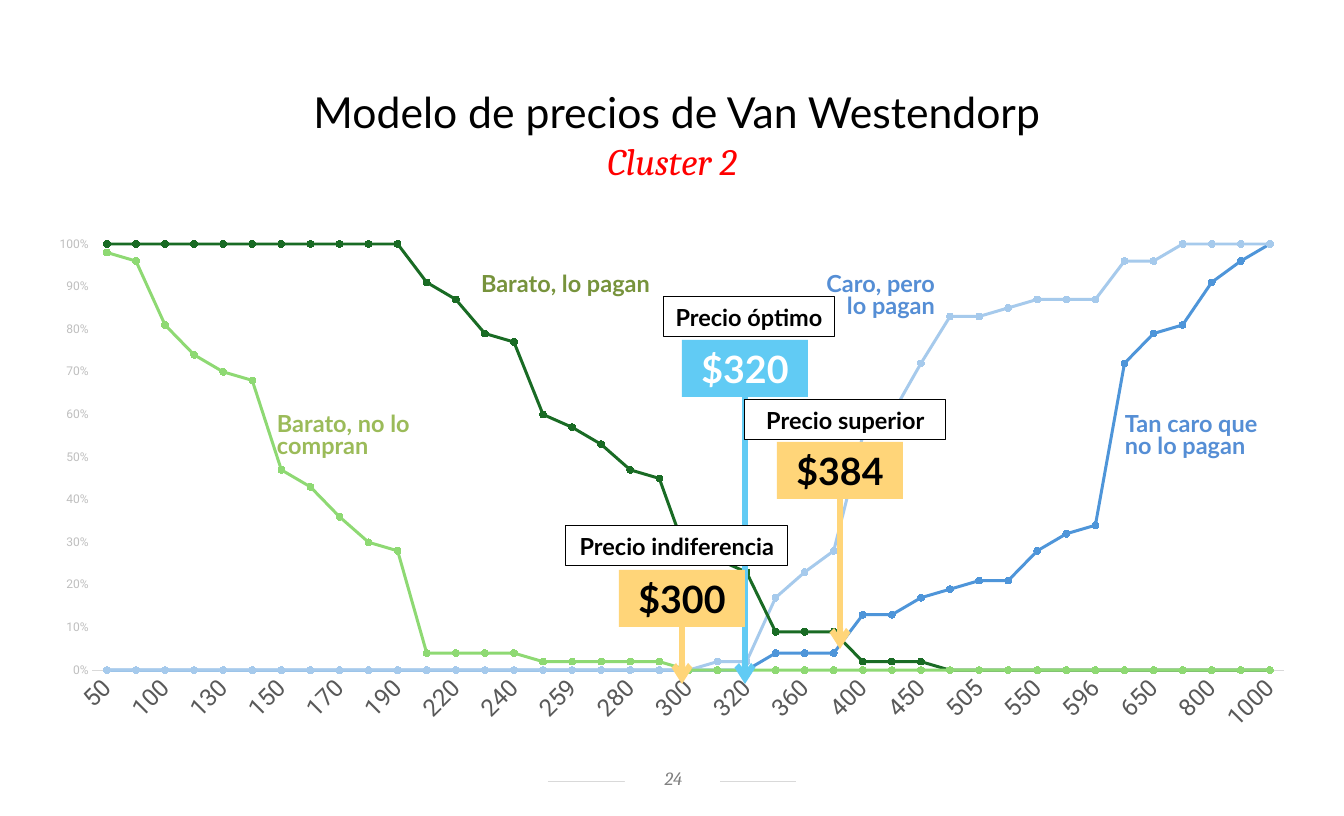
from dataclasses import dataclass

from lxml.etree import SubElement
from pptx import Presentation
from pptx.chart.data import CategoryChartData
from pptx.dml.color import RGBColor
from pptx.enum.chart import XL_CHART_TYPE as ChartType, XL_MARKER_STYLE as Marker, XL_TICK_MARK as Tick
from pptx.enum.shapes import MSO_CONNECTOR as Connector, MSO_SHAPE as Shape
from pptx.enum.text import MSO_ANCHOR as Anchor, MSO_AUTO_SIZE as AutoSize, PP_ALIGN as Align
from pptx.oxml import parse_xml
from pptx.oxml.ns import nsdecls, qn
from pptx.util import Pt

PX = 9525


@dataclass(frozen=True)
class Theme:
    sans: str = "Lato"
    serif: str = "Cambria"
    axis_font: str = "Roboto"
    title: float = 32
    subtitle: float = 28
    price: float = 28.2
    label: float = 17.6
    page_number: float = 14
    category: float = 18
    percent: float = 9
    black: str = "000000"
    white: str = "FFFFFF"
    red: str = "FF0000"
    rule: str = "D9D9D9"
    number: str = "808080"
    category_ink: str = "595959"
    percent_ink: str = "BFBFBF"
    optimum: str = "61CBF4"
    limit: str = "FFD579"
    expensive: str = "558ED5"
    cheap: str = "77933C"
    too_cheap: str = "9BBB59"


THEME = Theme()

PRICES = """50 80 100 120 130 140 150 160 170 180 190 200 220 230 240 250 259 260 280 290 300 305
320 350 360 380 400 420 450 500 505 520 550 580 596 600 650 700 800 900 1000""".split()
CURVES = [
    ("4E95D9", [0] * 23 + [.04] * 3 + [.13, .13, .17, .19, .21, .21, .28, .32, .34,
                                      .72, .79, .81, .91, .96, 1]),
    ("A6CAEC", [0] * 21 + [.02, .02, .17, .23, .28, .55, .6, .72, .83, .83, .85,
                           .87, .87, .87, .96, .96] + [1] * 4),
    ("196B24", [1] * 11 + [.91, .87, .79, .77, .6, .57, .53, .47, .45, .26, .26, .23,
                           .09, .09, .09, .02, .02, .02] + [0] * 12),
    ("8ED973", [.98, .96, .81, .74, .7, .68, .47, .43, .36, .3, .28] + [.04] * 4
     + [.02] * 5 + [0] * 21),
]

# price, caption, fill, ink, price box corner, caption box (left, top, width), arrow tip
MARKERS = [
    ("$320", "Precio óptimo", THEME.optimum, THEME.white, (682, 340), (663, 297, 172), 684),
    ("$384", "Precio superior", THEME.limit, THEME.black, (777, 442), (745, 400, 201), 649),
    ("$300", "Precio indiferencia", THEME.limit, THEME.black, (619, 570), (566, 526, 222), 684),
]
CURVE_NAMES = [
    ("Caro, pero lo pagan", THEME.expensive, Align.RIGHT, (800, 268, 147, 57)),
    ("Barato, no lo\ncompran", THEME.too_cheap, Align.LEFT, (265, 408, 157, 57)),
    ("Barato, lo pagan", THEME.cheap, Align.LEFT, (469, 268, 194, 35)),
    ("Tan caro que no lo pagan", THEME.expensive, Align.LEFT, (1113, 408, 171, 57)),
]


def emu(box):
    return [length * PX for length in box]


def style_font(font, name, size, color, bold=False, italic=False):
    font.name, font.size = name, Pt(size)
    font.bold, font.italic = bold, italic
    font.color.rgb = RGBColor.from_string(color)


def write(shape, text, name, size, color, align=Align.CENTER, insets=(12, 6, 12, 6),
          anchor=Anchor.TOP, wrap=True, spacing=1.0, **emphasis):
    frame = shape.text_frame
    frame.text = text
    frame.word_wrap, frame.auto_size = wrap, AutoSize.NONE
    frame.vertical_anchor = anchor
    frame.margin_left, frame.margin_top, frame.margin_right, frame.margin_bottom = emu(insets)
    for para in frame.paragraphs:
        para.alignment, para.line_spacing = align, spacing
        para.space_before = Pt(0)
        for span in para.runs:
            style_font(span.font, name, size, color, **emphasis)


def add_box(page, box, fill, outline=None):
    shape = page.shapes.add_shape(Shape.RECTANGLE, *emu(box))
    shape.shadow.inherit = False
    shape.fill.solid()
    shape.fill.fore_color.rgb = RGBColor.from_string(fill)
    if outline:
        shape.line.color.rgb = RGBColor.from_string(outline)
        shape.line.width = Pt(0.75)
    else:
        shape.line.fill.background()
    return shape


def add_line(page, start, end, color, width):
    line = page.shapes.add_connector(Connector.STRAIGHT, *emu(start + end))
    line.line.color.rgb = RGBColor.from_string(color)
    line.line.width = Pt(width)
    SubElement(line._element.spPr, qn("a:effectLst"))
    return line


def add_heading(page, title_box, subtitle_box):
    title, subtitle = page.shapes.title, page.placeholders[1]
    for shape, box in ((title, title_box), (subtitle, subtitle_box)):
        shape.left, shape.top, shape.width, shape.height = emu(box)
    insets = (13, 7, 13, 7)
    write(title, "Modelo de precios de Van Westendorp", THEME.sans, THEME.title,
          THEME.black, insets=insets)
    write(subtitle, "Cluster 2", THEME.serif, THEME.subtitle, THEME.red,
          insets=insets, italic=True)


def add_price_chart(page, box):
    data = CategoryChartData(number_format="0%")
    data.categories = PRICES
    for number, (_, values) in enumerate(CURVES, 1):
        data.add_series(f"Series {number}", values)
    chart = page.shapes.add_chart(ChartType.LINE_MARKERS, *emu(box), data).chart
    chart.has_legend = chart.has_title = False
    style_font(chart.font, "Calibri", 10, THEME.black)
    for series, (color, _) in zip(chart.plots[0].series, CURVES):
        rgb = RGBColor.from_string(color)
        series.smooth = False
        series.format.line.color.rgb = rgb
        series.format.line.width = Pt(2.25)
        series.marker.style, series.marker.size = Marker.CIRCLE, 5
        series.marker.format.fill.solid()
        series.marker.format.fill.fore_color.rgb = rgb
        series.marker.format.line.color.rgb = rgb
    style_axes(chart)
    place_plot(chart, x=0.045, y=0.033, w=0.935, h=0.826)


def style_axes(chart):
    prices, percents = chart.category_axis, chart.value_axis
    for axis in (prices, percents):
        axis.major_tick_mark = axis.minor_tick_mark = Tick.NONE
        axis.has_major_gridlines = False
    style_font(prices.tick_labels.font, THEME.axis_font, THEME.category, THEME.category_ink)
    prices.format.line.color.rgb = RGBColor.from_string(THEME.rule)
    prices.format.line.width = Pt(0.75)
    prices._element.find(qn("c:txPr")).find(qn("a:bodyPr")).set("rot", "-2700000")
    skip = parse_xml(f'<c:tickLblSkip {nsdecls("c")} val="2"/>')
    prices._element.find(qn("c:noMultiLvlLbl")).addprevious(skip)
    style_font(percents.tick_labels.font, THEME.axis_font, THEME.percent, THEME.percent_ink)
    percents.tick_labels.number_format = "0%"
    percents.tick_labels.number_format_is_linked = False
    percents.minimum_scale, percents.maximum_scale, percents.major_unit = 0, 1, 0.1
    percents.format.line.fill.background()


def place_plot(chart, **fractions):
    """Fix the inner plot area as fractions of the chart frame."""
    area = chart._chartSpace.chart.plotArea
    for old in area.findall(qn("c:layout")):
        area.remove(old)
    layout = parse_xml(f'<c:layout {nsdecls("c")}><c:manualLayout/></c:layout>')
    settings = {"layoutTarget": "inner", "xMode": "edge", "yMode": "edge", **fractions}
    for tag, value in settings.items():
        SubElement(layout[0], qn(f"c:{tag}")).set("val", str(value))
    area.insert(0, layout)


def add_price_marker(page, price, caption, fill, ink, corner, caption_box, tip):
    """Draw a price box with its arrow to the axis and its caption."""
    left, top = corner
    width, height = 126, 57
    center = left + width // 2
    price_box = add_box(page, (left, top, width, height), fill)
    write(price_box, price, THEME.sans, THEME.price, ink, bold=True)
    arrow = add_line(page, (center, top + height), (center, tip), fill, 4.5)
    arrow.begin_connect(price_box, 2)
    SubElement(arrow.line._get_or_add_ln(), qn("a:tailEnd")).set("type", "arrow")
    label = add_box(page, (*caption_box, 40), THEME.white, THEME.black)
    write(label, caption, THEME.sans, THEME.label, THEME.black, wrap=False, bold=True)


def add_curve_name(page, text, color, align, box):
    write(page.shapes.add_textbox(*emu(box)), text, THEME.sans, THEME.label, color,
          align=align, spacing=0.8, bold=True)


def add_page_number(page, box):
    left, top, width, height = box
    rule_y = top + 15
    add_line(page, (left - 77, rule_y), (left + width + 76, rule_y), THEME.rule, 0.5)
    write(add_box(page, box, THEME.white), "24", THEME.serif, THEME.page_number, THEME.number,
          insets=(12, 2, 10, 5), anchor=Anchor.MIDDLE, italic=True)


def main():
    deck = Presentation()
    deck.slide_width, deck.slide_height = emu((1344, 816))
    page = deck.slides.add_slide(deck.slide_layouts[0])
    add_heading(page, (10, 79, 1334, 65), (0, 131, 1344, 59))
    add_price_chart(page, (35, 227, 1275, 516))
    add_page_number(page, (625, 766, 95, 28))
    for marker in MARKERS:
        add_price_marker(page, *marker)
    for name in CURVE_NAMES:
        add_curve_name(page, *name)
    deck.save("out.pptx")


if __name__ == "__main__":
    main()
